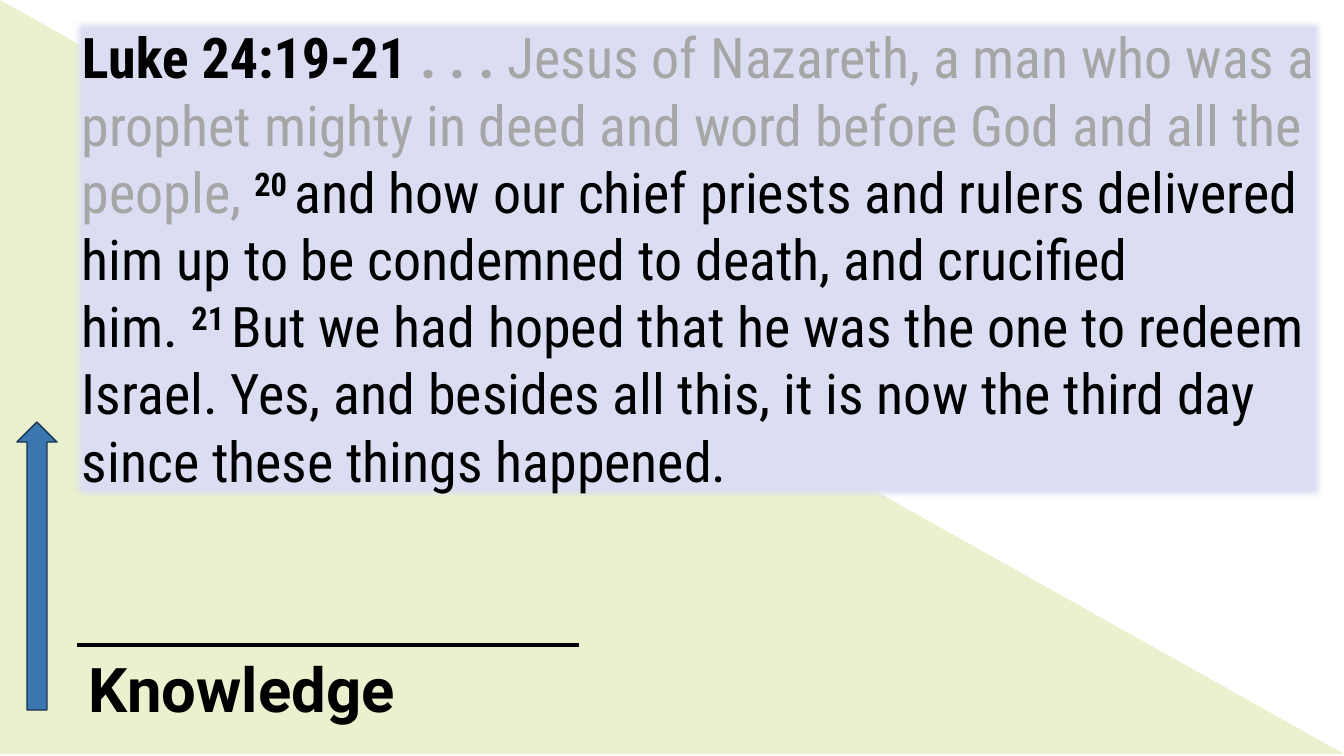
from lxml import etree
from pptx import Presentation
from pptx.dml.color import RGBColor
from pptx.enum.shapes import MSO_CONNECTOR, MSO_SHAPE
from pptx.enum.text import MSO_ANCHOR, PP_ALIGN
from pptx.oxml.ns import qn
from pptx.util import Emu, Pt

TRIANGLE = MSO_SHAPE.ISOSCELES_TRIANGLE
RECTANGLE = MSO_SHAPE.RECTANGLE
UP_ARROW = MSO_SHAPE.UP_ARROW
STRAIGHT = MSO_CONNECTOR.STRAIGHT
TOP, MIDDLE = MSO_ANCHOR.TOP, MSO_ANCHOR.MIDDLE
LEFT = PP_ALIGN.LEFT

EMU_PER_PX = 914400 / 100.8
TITLE_ONLY = 5
TIE, HARD_SPACE = "~", chr(160)
BLACK, GREY, GREEN = "000000", "A6A6A6", "EAF1CE"
LAVENDER, BLUE, NAVY = "DBDDF3", "3B76B1", "1A344E"

PASSAGE = [
    ("Luke 24:19-21 ", BLACK, True, False),
    (". . .", GREY, True, False),
    ("~Jesus of Nazareth, a man who was~a prophet~mighty in deed and word "
     "before God and all the people,~", GREY, False, False),
    ("20~", BLACK, True, True),
    ("and~how our chief priests and~rulers delivered him up to be condemned "
     "to death, and crucified him.~", BLACK, False, False),
    ("21~", BLACK, True, True),
    ("But we had hoped that he was~the one to redeem Israel. Yes, and besides "
     "all this, it is now~the third day since these things happened.~",
     BLACK, False, False),
]


def px(n):
    return Emu(round(n * EMU_PER_PX))


def rgb(color):
    return RGBColor.from_string(color)


def add_box(slide, kind, left, top, width, height, fill, line=None):
    sp = slide.shapes.add_shape(kind, px(left), px(top), px(width), px(height))
    sp.shadow.inherit = False
    sp.fill.solid()
    sp.fill.fore_color.rgb = rgb(fill)
    if line:
        sp.line.color.rgb = rgb(line)
        sp.line.width = Pt(1)
    else:
        sp.line.fill.background()
    return sp


def add_rule(slide, x1, x2, y):
    cxn = slide.shapes.add_connector(STRAIGHT, px(x1), px(y), px(x2), px(y))
    cxn.line.color.rgb = rgb(BLACK)
    cxn.line.width = Pt(3)
    etree.SubElement(cxn.element.spPr, qn("a:effectLst"))


def format_run(r, font, size, color, bold):
    r.font.name = font
    r.font.size = Pt(size)
    r.font.color.rgb = rgb(color)
    r.font.bold = bold


def soften_edges(sp, radius):
    effects = sp.element.spPr.find(qn("a:effectLst"))
    etree.SubElement(effects, qn("a:softEdge"), rad=str(px(radius)))


def add_passage(slide):
    sp = add_box(slide, RECTANGLE, 72, 18, 1255, 484, LAVENDER)
    soften_edges(sp, 7)
    tf = sp.text_frame
    tf.word_wrap = True
    tf.vertical_anchor = TOP
    p = tf.paragraphs[0]
    p.alignment = LEFT
    for text, color, bold, raised in PASSAGE:
        r = p.add_run()
        r.text = text.replace(TIE, HARD_SPACE)
        format_run(r, "Roboto Condensed", 40, color, bold)
        if raised:
            r.font._element.set("baseline", "30000")


def place_title(slide, text):
    title = slide.shapes.title
    title.left, title.top = px(75), px(646)
    title.width, title.height = px(550), px(93)
    tf = title.text_frame
    tf.text = text
    tf.word_wrap = True
    tf.vertical_anchor = MIDDLE
    tf.margin_left = tf.margin_right = px(13)
    tf.margin_top = tf.margin_bottom = px(13)
    p = tf.paragraphs[0]
    p.alignment = LEFT
    p.line_spacing = 0.9
    format_run(p.runs[0], "Roboto", 44, BLACK, True)
    title.element.getparent().append(title.element)


def main():
    prs = Presentation()
    prs.slide_width, prs.slide_height = px(1344), px(756)
    slide = prs.slides.add_slide(prs.slide_layouts[TITLE_ONLY])
    slope = add_box(slide, TRIANGLE, 0, 0, 1344, 754, GREEN)
    slope.adjustments[0] = 0
    add_rule(slide, 17, 579, 645)
    place_title(slide, "Knowledge")
    add_box(slide, RECTANGLE, 2, 157, 75, 589, GREEN)
    add_box(slide, UP_ARROW, 17, 422, 40, 288, BLUE, NAVY)
    add_passage(slide)
    prs.save("out.pptx")


if __name__ == "__main__":
    main()
